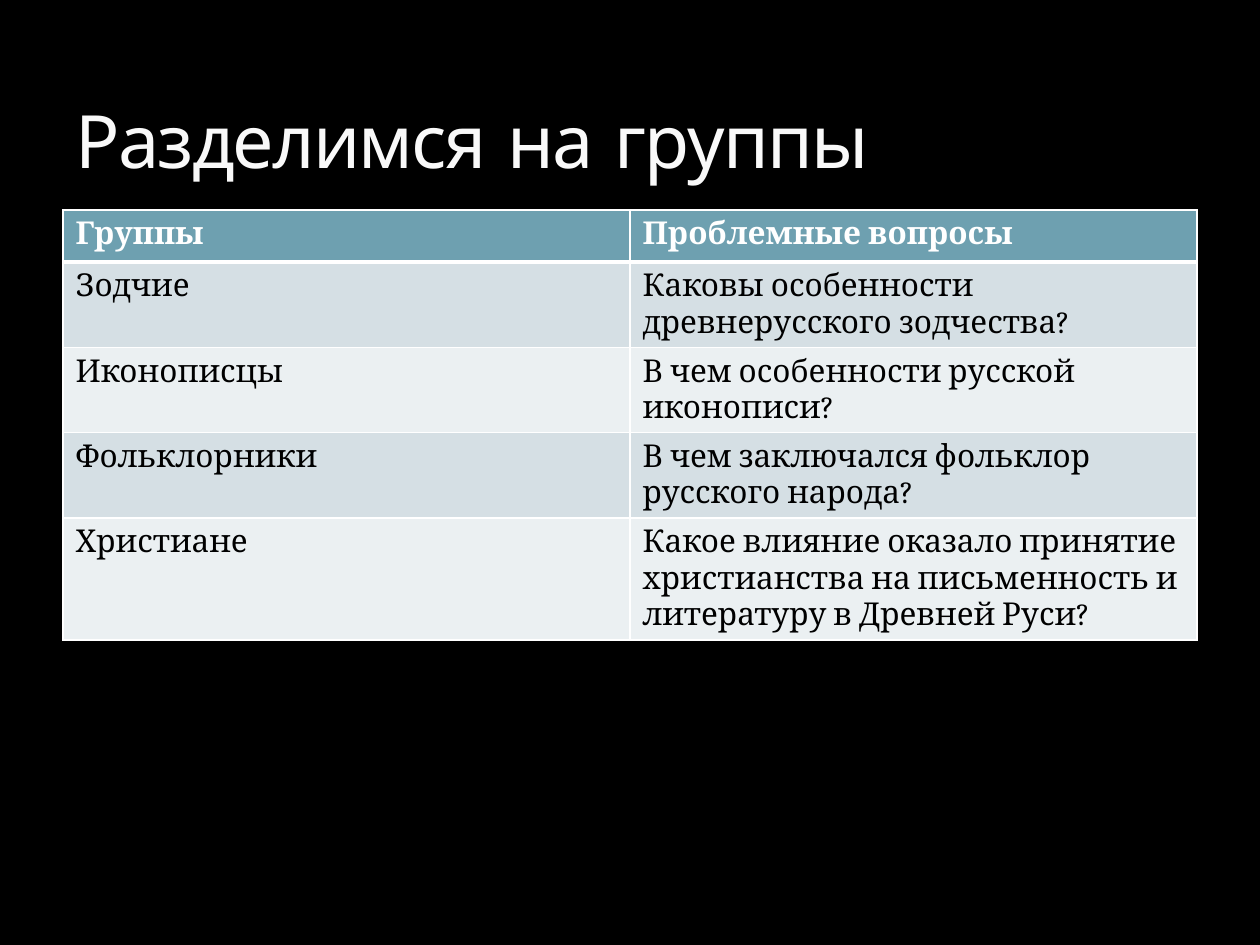
from lxml import etree
from pptx import Presentation
from pptx.dml.color import RGBColor
from pptx.enum.text import MSO_ANCHOR
from pptx.oxml.ns import qn
from pptx.util import Pt

PX = 914400 / 126
BOTTOM = MSO_ANCHOR.BOTTOM
HEADER_FILL = "6EA0B0"
BAND_FILLS = ["D5DFE4", "EBF0F2"]
ROWS = [
    ("Группы", "Проблемные вопросы"),
    ("Зодчие", "Каковы особенности древнерусского зодчества?"),
    ("Иконописцы", "В чем особенности русской иконописи?"),
    ("Фольклорники", "В чем заключался фольклор русского народа?"),
    ("Христиане", "Какое влияние оказало принятие христианства на письменность "
                  "и литературу в Древней Руси?"),
]


def px(*lengths):
    """Turn px lengths into EMU."""
    return [round(length * PX) for length in lengths]


def paint(target, color):
    """Give a fill or a font a solid hex colour."""
    if hasattr(target, "solid"):
        target.solid()
        target.fore_color.rgb = RGBColor.from_string(color)
    else:
        target.color.rgb = RGBColor.from_string(color)


deck = Presentation()
deck.slide_width, deck.slide_height = px(1260, 945)
page = deck.slides.add_slide(deck.slide_layouts[6])
paint(page.background.fill, "000000")

# Questions table
table = page.shapes.add_table(len(ROWS), 2, *px(63, 210, 1134, 260)).table
for column in table.columns:
    column.width = px(567)[0]
for row_index, texts in enumerate(ROWS):
    is_header = row_index == 0
    table.rows[row_index].height = px(52)[0]
    fill = HEADER_FILL if is_header else BAND_FILLS[(row_index - 1) % 2]
    for column_index, text in enumerate(texts):
        cell = table.cell(row_index, column_index)
        cell_props = cell._tc.get_or_add_tcPr()
        borders = {"lnL": 1, "lnR": 1, "lnT": 3 if row_index == 1 else 1,
                   "lnB": 3 if is_header else 1}
        for side, width in borders.items():
            line = etree.SubElement(cell_props, qn(f"a:{side}"), w=str(Pt(width)))
            solid = etree.SubElement(line, qn("a:solidFill"))
            etree.SubElement(solid, qn("a:srgbClr"), val="FFFFFF")
        paint(cell.fill, fill)
        span = cell.text_frame.paragraphs[0].add_run()
        span.text = text
        for name, value in {"name": "Cambria", "size": Pt(18), "bold": is_header}.items():
            setattr(span.font, name, value)
        paint(span.font, "FFFFFF" if is_header else "000000")

# Title
box = page.shapes.add_textbox(*px(63, 21, 1134, 168))
frame = box.text_frame
frame.word_wrap = True
frame.vertical_anchor = BOTTOM
span = frame.paragraphs[0].add_run()
span.text = "Разделимся на группы"
for name, value in {"name": "Comic Neue", "size": Pt(42)}.items():
    setattr(span.font, name, value)
paint(span.font, "F9F9F9")
span.font._element.set("spc", "-100")

deck.save("out.pptx")
